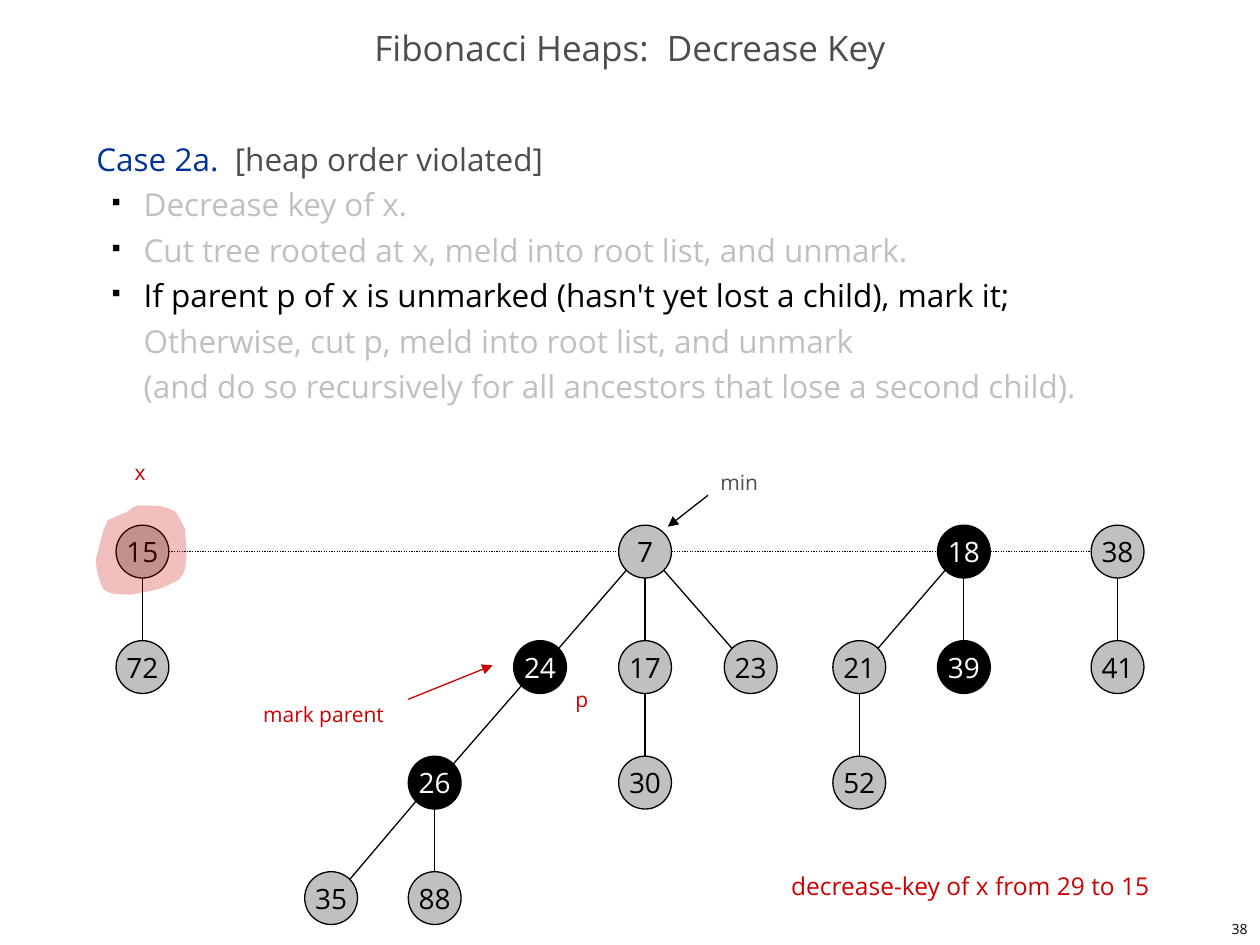
from lxml import etree
from pptx import Presentation
from pptx.dml.color import RGBColor
from pptx.enum.dml import MSO_LINE
from pptx.enum.shapes import MSO_CONNECTOR, MSO_SHAPE
from pptx.enum.text import MSO_ANCHOR, PP_ALIGN
from pptx.oxml.ns import qn
from pptx.util import Pt

STRAIGHT = MSO_CONNECTOR.STRAIGHT
ELLIPSE = MSO_SHAPE.OVAL
DOTTED = MSO_LINE.ROUND_DOT
MIDDLE = MSO_ANCHOR.MIDDLE
LEFT, CENTER, RIGHT = PP_ALIGN.LEFT, PP_ALIGN.CENTER, PP_ALIGN.RIGHT

BLACK = RGBColor(0x00, 0x00, 0x00)
MARKED = RGBColor(0x01, 0x00, 0x00)
WHITE = RGBColor(0xFF, 0xFF, 0xFF)
GRAY = RGBColor(0xC0, 0xC0, 0xC0)
DARK_GRAY = RGBColor(0x4D, 0x4D, 0x4D)
BLUE = RGBColor(0x00, 0x33, 0x99)
RED = RGBColor(0xCC, 0x00, 0x00)
FONT = "Open Sans"

presentation = Presentation()
presentation.slide_width, presentation.slide_height = Pt(720), Pt(540)
slide = presentation.slides.add_slide(presentation.slide_layouts[6])
shapes = slide.shapes


def add_text(text, left, top, width, height, size, color, align=LEFT, anchor=None):
    frame = shapes.add_textbox(Pt(left), Pt(top), Pt(width), Pt(height)).text_frame
    frame.word_wrap = True
    frame.vertical_anchor = anchor
    paragraph = frame.paragraphs[0]
    paragraph.text = text
    paragraph.alignment = align
    paragraph.font.size, paragraph.font.name = Pt(size), FONT
    paragraph.font.color.rgb = color
    return frame


def add_line(x1, y1, x2, y2, color=BLACK, dash=None, arrow=False):
    line = shapes.add_connector(STRAIGHT, Pt(x1), Pt(y1), Pt(x2), Pt(y2))
    line.line.width = Pt(0.75)
    line.line.color.rgb = color
    if dash:
        line.line.dash_style = dash
    if arrow:
        etree.SubElement(line.line._get_or_add_ln(), qn("a:tailEnd"), type="triangle")
    etree.SubElement(line._element.spPr, qn("a:effectLst"))


# Title, explanation and slide number
title = add_text("Fibonacci Heaps:  Decrease Key", 0, 12, 720, 36, 20, DARK_GRAY, CENTER, MIDDLE)
title.paragraphs[0].line_spacing = 0.7

body = add_text("", 48, 72, 618, 426, 18, BLACK)
explanation = [
    [("Case 2a.  ", BLUE), ("[heap order violated]", DARK_GRAY)],
    [("Decrease key of x.", GRAY)],
    [("Cut tree rooted at x, meld into root list, and unmark.", GRAY)],
    [("If parent p of x is unmarked (hasn't yet lost a child), mark it;\n", BLACK),
     ("Otherwise, cut p, meld into root list, and unmark\n", GRAY),
     ("(and do so recursively for all ancestors that lose a second child).", GRAY)],
]
for index, pieces in enumerate(explanation):
    paragraph = body.add_paragraph() if index else body.paragraphs[0]
    paragraph.line_spacing = Pt(26)
    paragraph.font.size, paragraph.font.name = Pt(18), FONT
    for text, color in pieces:
        run = paragraph.add_run()
        run.text = text.rstrip("\n")
        run.font.color.rgb = color
        if text.endswith("\n"):
            paragraph.add_line_break()
    if index:
        paragraph.level = 1
        properties = paragraph._p.get_or_add_pPr()
        properties.set("marL", str(Pt(27)))
        properties.set("indent", str(Pt(-18)))
        bullet_color = etree.Element(qn("a:buClr"))
        etree.SubElement(bullet_color, qn("a:srgbClr"), val=str(BLACK))
        bullet_size = etree.Element(qn("a:buSzPct"), val="35000")
        bullet = etree.Element(qn("a:buChar"), char="■")
        position = list(properties).index(properties.find(qn("a:lnSpc"))) + 1
        properties[position:position] = [bullet_color, bullet_size, bullet]

add_text("38", 570, 522, 150, 18, 8, BLACK, RIGHT, MIDDLE)

# Heap: key -> (centre x, level, parent key)
RADIUS = 15.1
DIAGONAL = RADIUS * 0.71
TOP_ROW, ROW_STEP = 315.2, 66
heap = {
    15: (81.4, 0, None), 72: (81.4, 1, 15),
    7: (368.6, 0, None), 24: (308.6, 1, 7), 17: (368.6, 1, 7), 23: (429, 1, 7),
    26: (248.4, 2, 24), 30: (368.6, 2, 17),
    35: (189.2, 3, 26), 88: (248.4, 3, 26),
    18: (550.8, 0, None), 21: (491, 1, 18), 39: (550.8, 1, 18), 52: (491, 2, 21),
    38: (638.6, 0, None), 41: (638.6, 1, 38),
}
marked_keys = {18, 24, 26, 39}

for key, (x, level, parent) in heap.items():
    y = TOP_ROW + level * ROW_STEP
    node = shapes.add_shape(ELLIPSE, Pt(x - RADIUS), Pt(y - RADIUS), Pt(2 * RADIUS), Pt(2 * RADIUS))
    node.shadow.inherit = False
    node.fill.solid()
    node.fill.fore_color.rgb = MARKED if key in marked_keys else GRAY
    node.line.color.rgb = BLACK
    node.line.width = Pt(0.75)
    frame = node.text_frame
    frame.word_wrap = False
    frame.vertical_anchor = MIDDLE
    frame.margin_left = frame.margin_right = frame.margin_top = frame.margin_bottom = 0
    paragraph = frame.paragraphs[0]
    paragraph.text = str(key)
    paragraph.alignment = CENTER
    paragraph.font.size, paragraph.font.name = Pt(16), FONT
    paragraph.font.color.rgb = WHITE if key in marked_keys else BLACK

    if parent is not None:
        parent_x = heap[parent][0]
        side = (x > parent_x) - (x < parent_x)
        drop = DIAGONAL if side else RADIUS
        add_line(parent_x + side * DIAGONAL, y - ROW_STEP + drop, x - side * DIAGONAL, y - drop)

root_centers = [x for x, level, parent in heap.values() if parent is None]
for left_x, right_x in zip(root_centers, root_centers[1:]):
    add_line(left_x + RADIUS, TOP_ROW, right_x - RADIUS, TOP_ROW, dash=DOTTED)

# Highlight around x: cubic curves (two control points and an end point each)
highlight_start = (61.2, 297.4)
highlight_curves = [
    ((64.8, 296), (68.4, 293.8), (72, 293)),
    ((77, 289.4), (74.9, 290.2), (79.2, 288.7)),
    ((90, 289.4), (92.2, 288), (100.1, 292.3)),
    ((103, 296), (103.7, 298.8), (105.8, 302.4)),
    ((105.8, 311.8), (110.2, 330.5), (97.9, 333.4)),
    ((90.7, 337.7), (82.1, 338.4), (74.2, 339.8)),
    ((68.4, 339.1), (61.9, 340.6), (58.3, 335.5)),
    ((56.2, 329), (55.4, 328.3), (54.7, 319.7)),
    ((56.2, 313.9), (57.6, 308.9), (59, 303.1)),
    ((59.8, 301), (61.2, 299.5), (61.2, 297.4)),
]
CURVE_STEPS = 8
outline = []
start = highlight_start
for control_1, control_2, end in highlight_curves:
    for step in range(1, CURVE_STEPS + 1):
        t = step / CURVE_STEPS
        outline.append(tuple(
            Pt((1 - t) ** 3 * a + 3 * (1 - t) ** 2 * t * b + 3 * (1 - t) * t ** 2 * c + t ** 3 * d)
            for a, b, c, d in zip(start, control_1, control_2, end)))
    start = end
builder = shapes.build_freeform(*(Pt(value) for value in highlight_start))
builder.add_line_segments(outline, close=True)
highlight = builder.convert_to_shape()
highlight.shadow.inherit = False
highlight.fill.solid()
highlight.fill.fore_color.rgb = RED
highlight.line.fill.background()
highlight_color = highlight._element.spPr.find(qn("a:solidFill")).find(qn("a:srgbClr"))
etree.SubElement(highlight_color, qn("a:alpha"), val="25000")

# Labels and their arrows
for text, left, top, width, height, size, color in [
    ("min", 404.6, 265, 37, 21.6, 12, DARK_GRAY),
    ("decrease-key of x from 29 to 15", 445, 494, 231, 24, 14, RED),
    ("p", 321.8, 388.8, 22, 21.6, 12, RED),
    ("x", 69.8, 259.2, 21, 21.6, 12, RED),
    ("mark parent", 143.3, 397.5, 86, 21.6, 12, RED),
]:
    add_text(text, left, top, width, height, size, color)
add_line(404.6, 283, 381.6, 301, arrow=True)
add_line(233.3, 399.6, 281.5, 380.2, RED, arrow=True)

presentation.save("out.pptx")
